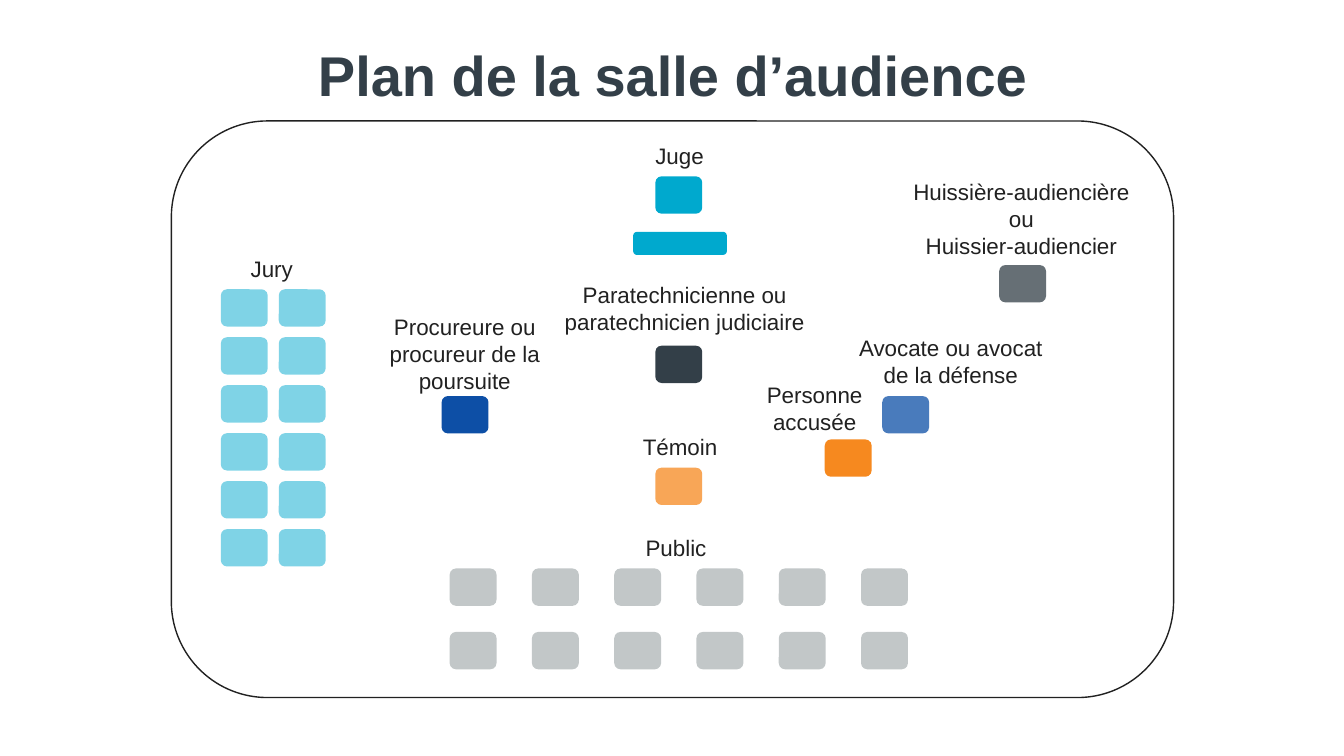
"""Build the courtroom floor plan slide on a grid of tenth-of-an-inch cells."""
from itertools import product

from lxml.etree import SubElement
from pptx import Presentation
from pptx.dml.color import RGBColor
from pptx.enum.shapes import MSO_SHAPE
from pptx.enum.text import MSO_ANCHOR, MSO_AUTO_SIZE, PP_ALIGN
from pptx.oxml.ns import qn
from pptx.util import Inches, Pt

COLORS = {
    "ink": "212121", "slate": "333F48", "cyan": "00A9CE",
    "orange": "F6891F", "blue": "0D4FA6", "gray": "C2C7C8",
}
TITLE_FONT = {"name": "Arial", "size": Pt(40), "bold": True}
LABEL_FONT = {"name": "Arial", "size": Pt(16), "bold": False}
TITLE_FRAME = {
    "margin_left": 0, "margin_top": 0, "margin_right": 0, "margin_bottom": 0,
    "word_wrap": True, "vertical_anchor": MSO_ANCHOR.TOP,
    "auto_size": MSO_AUTO_SIZE.NONE,
}
LABEL_FRAME = {"word_wrap": True, "auto_size": MSO_AUTO_SIZE.SHAPE_TO_FIT_TEXT}
SEAT_SIZE = (4.65, 3.7)


def apply(target, values):
    for attribute, value in values.items():
        setattr(target, attribute, value)


class FloorPlan:
    def __init__(self, slide, cell=0.1):
        self.slide = slide
        self.cell = cell

    def span(self, *cells):
        return [Inches(count * self.cell) for count in cells]

    def fill_text(self, frame, lines, font, color, spacing):
        frame.text = "\n".join(lines)
        for paragraph in frame.paragraphs:
            apply(paragraph, {"alignment": PP_ALIGN.CENTER, "line_spacing": spacing})
            apply(paragraph.font, font)
            paragraph.font.color.rgb = RGBColor.from_string(COLORS[color])

    def title(self, text, *area):
        heading = self.slide.shapes.title
        apply(heading, dict(zip(("left", "top", "width", "height"), self.span(*area))))
        apply(heading.text_frame, TITLE_FRAME)
        self.fill_text(heading.text_frame, [text], TITLE_FONT, "slate", 0.9)

    def label(self, lines, *area):
        frame = self.slide.shapes.add_textbox(*self.span(*area)).text_frame
        apply(frame, LABEL_FRAME)
        self.fill_text(frame, lines, LABEL_FONT, "ink", 1.0)

    def rounded(self, *area):
        block = self.slide.shapes.add_shape(
            MSO_SHAPE.ROUNDED_RECTANGLE, *self.span(*area))
        block.shadow.inherit = False
        return block

    def furniture(self, color, column, row, size=SEAT_SIZE, opacity=100):
        block = self.rounded(column, row, *size)
        block.line.fill.background()
        block.fill.solid()
        block.fill.fore_color.rgb = RGBColor.from_string(COLORS[color])
        if opacity < 100:
            tint = block.element.spPr.find(qn("a:solidFill"))[0]
            SubElement(tint, qn("a:alpha"), val=str(opacity * 1000))

    def seating(self, color, origin, pitch, counts, opacity=100):
        for row, column in product(range(counts[1]), range(counts[0])):
            self.furniture(color, origin[0] + column * pitch[0],
                           origin[1] + row * pitch[1], opacity=opacity)

    def walls(self, *area):
        room = self.rounded(*area)
        room.fill.background()
        room.line.color.rgb = RGBColor.from_string(COLORS["ink"])
        room.line.width = Pt(1)


LABELS = [
    (["Jury"], 20.9, 24.8, 12.1, 3.7),
    (["Public"], 61, 52.5, 12.1, 3.7),
    (["Huissière-audiencière ou", "Huissier-audiencier"], 88.5, 17.2, 25.6, 9.3),
    (["Personne accusée"], 74.6, 37.3, 12.4, 6.6),
    (["Avocate ou avocat de la défense"], 83.4, 32.7, 21.8, 6.6),
    (["Paratechnicienne ou paratechnicien judiciaire"], 54.5, 27.4, 26.8, 6.4),
    (["Procureure ou procureur de la poursuite"], 36.8, 30.6, 18.6, 9.3),
    (["Témoin"], 59.9, 42.5, 15.1, 3.7),
    (["Juge"], 61.2, 13.6, 12.4, 3.7),
]
ROLE_SEATS = {
    "bailiff": ("slate", 99.1, 26.3, 75),
    "judge": ("cyan", 65, 17.5, 100),
    "accused": ("orange", 81.8, 43.6, 100),
    "defence": ("blue", 87.5, 39.3, 75),
    "witness": ("orange", 65, 46.4, 75),
    "clerk": ("slate", 65, 34.3, 100),
    "prosecutor": ("blue", 43.8, 39.3, 100),
}


def main():
    deck = Presentation()
    apply(deck, {"slide_width": Inches(13.33), "slide_height": Inches(7.5)})
    plan = FloorPlan(deck.slides.add_slide(deck.slide_layouts[5]))
    plan.title("Plan de la salle d’audience", 9.7, 4.8, 114, 10)
    plan.seating("cyan", (21.9, 28.7), (5.75, 4.76), (2, 6), opacity=50)
    for lines, *area in LABELS:
        plan.label(lines, *area)
    plan.furniture("cyan", 62.8, 23, size=(9.3, 2.3))
    for color, column, row, opacity in ROLE_SEATS.values():
        plan.furniture(color, column, row, opacity=opacity)
    plan.seating("gray", (44.6, 56.4), (8.16, 6.3), (6, 2))
    plan.walls(17, 12, 99.4, 57.2)
    deck.save("out.pptx")


if __name__ == "__main__":
    main()
